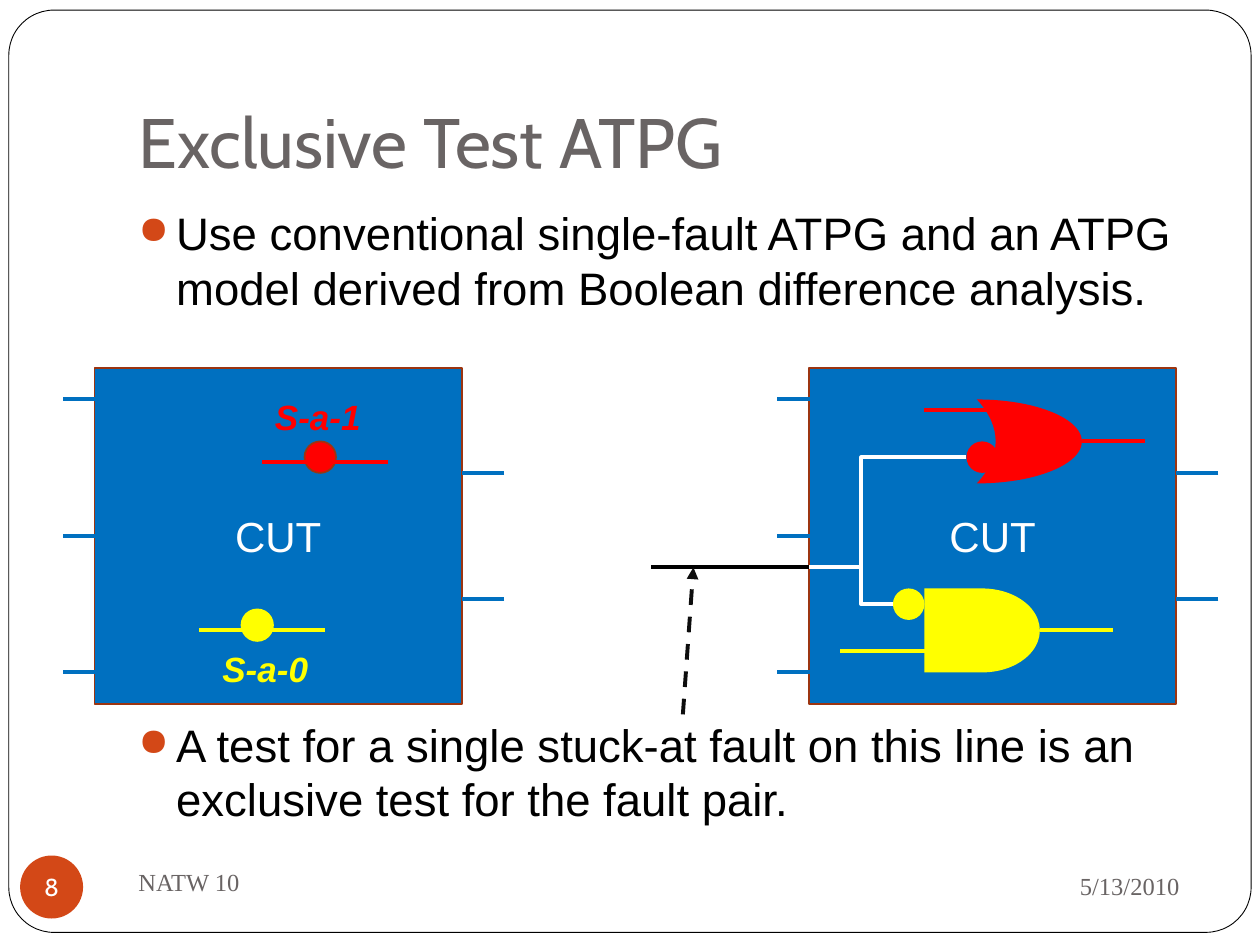
from dataclasses import dataclass

from lxml.etree import SubElement
from pptx import Presentation
from pptx.dml.color import RGBColor
from pptx.enum.dml import MSO_LINE
from pptx.enum.shapes import MSO_CONNECTOR, MSO_SHAPE
from pptx.enum.text import MSO_ANCHOR, PP_ALIGN
from pptx.oxml.ns import qn
from pptx.util import Inches, Pt


@dataclass(frozen=True)
class Theme:
    white: str = "FFFFFF"
    black: str = "000000"
    arrow: str = "0D0D0D"
    grey: str = "696464"
    accent: str = "D34817"
    edge: str = "9C3511"
    circuit: str = "0070C0"
    stuck_one: str = "FF0000"
    stuck_zero: str = "FFFF00"
    heading_font: str = "Cabin"
    body_font: str = "Arial"
    footer_font: str = "Times New Roman"
    title_size: int = 40
    body_size: int = 26
    block_size: int = 24
    fault_size: int = 20
    footer_size: int = 14
    wire: float = 2.25


THEME = Theme()
CELL = 1 / 12  # drawing grid: twelve cells to the inch
BLOCK_W, BLOCK_H = 35, 32  # circuit block, in cells


def rgb(code):
    return RGBColor.from_string(code)


def style_text(paragraph, font, size, color, align=PP_ALIGN.LEFT):
    paragraph.alignment = align
    paragraph.font.name = font
    paragraph.font.size = Pt(size)
    paragraph.font.color.rgb = rgb(color)


def add_text(slide, box, text, font, size, color, align=PP_ALIGN.LEFT,
             anchor=MSO_ANCHOR.TOP, wrap=True):
    frame = slide.shapes.add_textbox(*map(Inches, box)).text_frame
    frame.word_wrap = wrap
    frame.vertical_anchor = anchor
    frame.text = text
    for paragraph in frame.paragraphs:
        style_text(paragraph, font, size, color, align)
    return frame


def add_figure(slide, kind, box, fill=None, edge=None, edge_width=1):
    figure = slide.shapes.add_shape(kind, *map(Inches, box))
    figure.shadow.inherit = False
    if fill:
        figure.fill.solid()
        figure.fill.fore_color.rgb = rgb(fill)
    else:
        figure.fill.background()
    if edge:
        figure.line.color.rgb = rgb(edge)
        figure.line.width = Pt(edge_width)
    else:
        figure.line.fill.background()
    return figure


def add_wire(slide, start, end, color, kind=MSO_CONNECTOR.STRAIGHT):
    wire = slide.shapes.add_connector(kind, *map(Inches, (*start, *end)))
    wire.line.color.rgb = rgb(color)
    wire.line.width = Pt(THEME.wire)
    SubElement(wire._element.spPr, qn("a:effectLst"))
    return wire


def block_grid(origin):
    """Return functions that turn cells of a block into slide points and boxes."""
    left, top = origin

    def point(col, row):
        return left + col * CELL, top + row * CELL

    def box(col, row, width, height):
        return (*point(col, row), width * CELL, height * CELL)

    return point, box


def build_frame(slide, box):
    frame = add_figure(slide, MSO_SHAPE.ROUNDED_RECTANGLE, box,
                       edge=THEME.black, edge_width=0.5)
    frame.adjustments[0] = 0.049


def build_title(slide, box, text):
    title = slide.shapes.title
    title.left, title.top, title.width, title.height = map(Inches, box)
    frame = title.text_frame
    frame.text = text
    frame.vertical_anchor = MSO_ANCHOR.BOTTOM
    frame.margin_bottom = Inches(0.1)
    style_text(frame.paragraphs[0], THEME.heading_font, THEME.title_size, THEME.grey)


def build_points(slide, box, points, gap):
    frame = add_text(slide, box, "\n".join(points), THEME.body_font,
                     THEME.body_size, THEME.black)
    for index, paragraph in enumerate(frame.paragraphs):
        paragraph.space_before = Pt(gap if index else 5.8)
        props = paragraph._p.get_or_add_pPr()
        props.set("marL", str(Inches(0.3)))
        props.set("indent", str(-Inches(0.3)))
        color = SubElement(props, qn("a:buClr"))
        SubElement(color, qn("a:srgbClr"), val=THEME.accent)
        SubElement(props, qn("a:buSzPct"), val="85000")
        SubElement(props, qn("a:buChar"), char="●")
        # the default run properties come after the bullet in the schema
        props.append(props.find(qn("a:defRPr")))


def build_footer(slide, box, event, date, number):
    left, top, width, height = box
    look = (THEME.footer_font, THEME.footer_size, THEME.grey)
    add_text(slide, (left, top, width / 2, height), event, *look,
             anchor=MSO_ANCHOR.MIDDLE)
    add_text(slide, (left + width / 2, top + 0.03, width / 2, height), date, *look,
             align=PP_ALIGN.RIGHT, anchor=MSO_ANCHOR.MIDDLE)
    # Page number badge
    badge = add_figure(slide, MSO_SHAPE.OVAL, (0.16, top + 0.04, 0.5, 0.5), THEME.accent)
    frame = badge.text_frame
    frame.margin_left = frame.margin_right = frame.margin_top = frame.margin_bottom = 0
    frame.word_wrap = False
    frame.text = number
    style_text(frame.paragraphs[0], THEME.heading_font, THEME.footer_size,
               THEME.white, PP_ALIGN.CENTER)


def build_block(slide, origin):
    """Circuit under test with its input and output pins."""
    point, box = block_grid(origin)
    block = add_figure(slide, MSO_SHAPE.RECTANGLE, box(0, 0, BLOCK_W, BLOCK_H),
                       THEME.circuit, THEME.edge)
    block.text_frame.text = "CUT"
    style_text(block.text_frame.paragraphs[0], THEME.body_font, THEME.block_size,
               THEME.white, PP_ALIGN.CENTER)
    for row in (3, 16, 29):
        add_wire(slide, point(1, row), point(-3, row), THEME.circuit)
    for row in (10, 22):
        add_wire(slide, point(BLOCK_W + 4, row), point(BLOCK_W, row), THEME.circuit)


def build_fault_pair(slide, origin):
    build_block(slide, origin)
    point, box = block_grid(origin)
    faults = (("S-a-1", THEME.stuck_one, THEME.edge, (20, 7), (16, 9), (16, 2)),
              ("S-a-0", THEME.stuck_zero, THEME.stuck_zero, (14, 23), (10, 25), (11, 26)))
    for name, color, edge, dot, line, label in faults:
        add_figure(slide, MSO_SHAPE.OVAL, box(*dot, 3, 3), color, edge)
        add_wire(slide, point(*line), point(line[0] + 12, line[1]), color)
        caption = add_text(slide, box(*label, 10.7, 5.3), name, THEME.body_font,
                           THEME.fault_size, color, wrap=False)
        caption.paragraphs[0].font.bold = True
        caption.paragraphs[0].font.italic = True


def build_atpg_model(slide, origin):
    build_block(slide, origin)
    point, box = block_grid(origin)
    # Inverted inputs and gate outputs
    add_figure(slide, MSO_SHAPE.OVAL, box(15, 7, 3, 3), THEME.stuck_one)
    add_figure(slide, MSO_SHAPE.OVAL, box(8, 21, 3, 3), THEME.stuck_zero)
    add_wire(slide, point(26, 7), point(32, 7), THEME.stuck_one)
    add_wire(slide, point(22, 25), point(29, 25), THEME.stuck_zero)
    # OR gate
    or_gate = add_figure(slide, MSO_SHAPE.MOON, box(16, 3, 10, 8), THEME.stuck_one)
    or_gate.adjustments[0] = 0.821
    or_gate._element.spPr.xfrm.set("flipH", "1")
    add_wire(slide, point(11, 4), point(17, 4), THEME.stuck_one)
    # AND gate
    add_figure(slide, MSO_SHAPE.FLOWCHART_DELAY, box(11, 21, 11, 8), THEME.stuck_zero)
    add_wire(slide, point(3, 27), point(12, 27), THEME.stuck_zero)
    # Shared input line, branching to both gates
    add_wire(slide, point(-1, 19), point(5, 19), THEME.white)
    branch = add_wire(slide, point(15, 8.5), point(8, 22.5), THEME.white,
                      MSO_CONNECTOR.ELBOW)
    bends = branch._element.spPr.find(qn("a:prstGeom")).find(qn("a:avLst"))
    SubElement(bends, qn("a:gd"), name="adj1", fmla="val 142900")
    add_wire(slide, point(-15, 19), point(0, 19), THEME.black)
    # Pointer from the second bullet
    pointer = add_wire(slide, point(-12, 33), point(-11, 19), THEME.arrow)
    pointer.line.dash_style = MSO_LINE.DASH
    SubElement(pointer.line._get_or_add_ln(), qn("a:tailEnd"), type="triangle")


def main():
    prs = Presentation()
    prs.slide_width, prs.slide_height = Inches(10), Inches(7.5)
    slide = prs.slides.add_slide(prs.slide_layouts[5])
    build_frame(slide, (0.07, 0.08, 9.86, 7.32))
    build_title(slide, (1, 0.3, 8.5, 1.25), "Exclusive Test ATPG")
    build_footer(slide, (1, 6.75, 8.46, 0.5), "NATW 10", "5/13/2010", "8")
    build_points(slide, (1, 1.58, 8.5, 5.25), (
        "Use conventional single-fault ATPG and an ATPG model derived from "
        "Boolean difference analysis.",
        "A test for a single stuck-at fault on this line is an exclusive test "
        "for the fault pair."), gap=230)
    build_fault_pair(slide, (0.75, 2.92))
    build_atpg_model(slide, (6.42, 2.92))
    prs.save("out.pptx")


if __name__ == "__main__":
    main()
